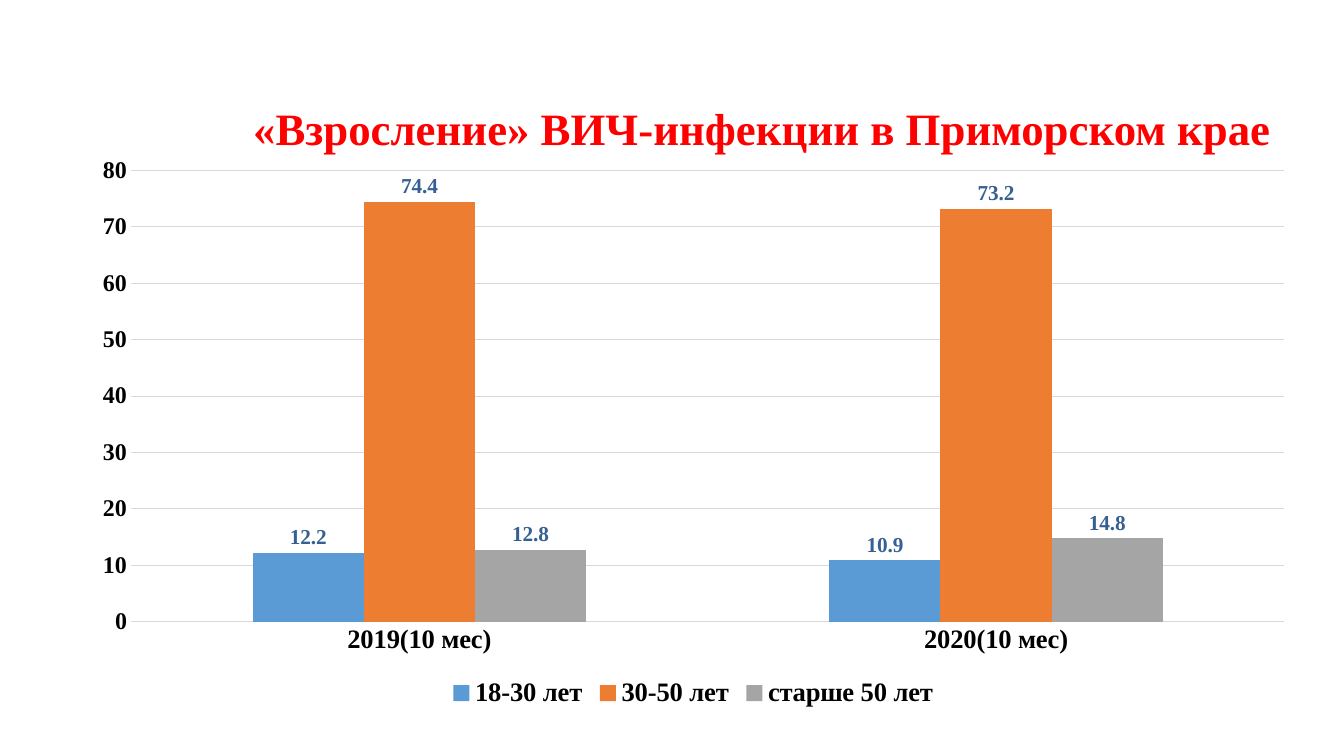
from dataclasses import dataclass

from lxml.etree import SubElement
from pptx import Presentation
from pptx.chart.data import CategoryChartData
from pptx.dml.color import RGBColor
from pptx.enum.chart import (XL_CHART_TYPE, XL_LABEL_POSITION,
                             XL_LEGEND_POSITION, XL_TICK_MARK)
from pptx.enum.text import MSO_ANCHOR, PP_ALIGN
from pptx.oxml.ns import qn
from pptx.util import Inches, Pt


@dataclass
class Theme:
    face: str = "Times New Roman"
    title: str = "FF0000"
    ink: str = "000000"
    label: str = "376092"
    grid: str = "D9D9D9"
    bars: tuple = ("5B9BD5", "ED7D31", "A5A5A5")
    title_size: float = 32
    cat_size: float = 19
    val_size: float = 17.1
    label_size: float = 15.2
    hair: float = 0.71


def style(font, face, size, color, bold=True):
    font.name, font.size, font.bold = face, Pt(size), bold
    font.color.rgb = RGBColor.from_string(color)


def write(frame, text, face, size, color, bold=True, align=PP_ALIGN.CENTER):
    frame.word_wrap = True
    frame.vertical_anchor = MSO_ANCHOR.MIDDLE
    para = frame.paragraphs[0]
    para.alignment = align
    run = para.add_run()
    run.text = text
    style(run.font, face, size, color, bold)


class Deck:
    def __init__(self, theme):
        self.theme = theme
        self.prs = Presentation()
        self.prs.slide_width, self.prs.slide_height = Inches(13.33), Inches(7.5)
        self.slide = self.prs.slides.add_slide(self.prs.slide_layouts[6])

    def title(self, text, box):
        t = self.theme
        shape = self.slide.shapes.add_textbox(*map(Inches, box))
        write(shape.text_frame, text, t.face, t.title_size, t.title)

    def hairline(self, line):
        line.color.rgb = RGBColor.from_string(self.theme.grid)
        line.width = Pt(self.theme.hair)

    def columns(self, cats, series, box, inner):
        t = self.theme
        data = CategoryChartData(number_format="General")
        data.categories = cats
        for name, vals in series.items():
            data.add_series(name, vals)
        chart = self.slide.shapes.add_chart(
            XL_CHART_TYPE.COLUMN_CLUSTERED, *map(Inches, box), data).chart
        chart.has_title = False
        style(chart.font, "Calibri", 10, t.ink, bold=False)

        # Axes
        cat, val = chart.category_axis, chart.value_axis
        for axis, size in ((cat, t.cat_size), (val, t.val_size)):
            axis.major_tick_mark = axis.minor_tick_mark = XL_TICK_MARK.NONE
            style(axis.tick_labels.font, t.face, size, t.ink)
        self.hairline(cat.format.line)
        val.format.line.fill.background()
        val.minimum_scale, val.maximum_scale, val.major_unit = 0, 80, 10
        self.hairline(val.major_gridlines.format.line)

        # Bars and their values
        plot = chart.plots[0]
        plot.gap_width, plot.overlap = 219, 0
        plot.vary_by_categories = False
        for bar, color in zip(plot.series, t.bars):
            bar.format.fill.solid()
            bar.format.fill.fore_color.rgb = RGBColor.from_string(color)
            labels = bar.data_labels
            labels.show_value = True
            labels.position = XL_LABEL_POSITION.OUTSIDE_END
            style(labels.font, t.face, t.label_size, t.label)

        # Legend
        chart.has_legend = True
        chart.legend.position = XL_LEGEND_POSITION.BOTTOM
        chart.legend.include_in_layout = False
        style(chart.legend.font, t.face, t.cat_size, t.ink)
        self.place(chart, inner)

    def place(self, chart, inner):
        """Set the inner plot area as fractions of the chart."""
        area = chart.plots[0]._element.getparent()
        for old in area.findall(qn("c:layout")):
            area.remove(old)
        layout = SubElement(area, qn("c:layout"))
        area.insert(0, layout)
        manual = SubElement(layout, qn("c:manualLayout"))
        marks = [("layoutTarget", "inner"), ("xMode", "edge"), ("yMode", "edge")]
        for tag, value in marks + list(zip("xywh", inner)):
            SubElement(manual, qn("c:" + tag)).set("val", str(value))

    def save(self):
        self.prs.save("out.pptx")


def main():
    deck = Deck(Theme())
    # Age groups by year
    left, top, width, height = box = (0.77, 1.45, 12.21, 5.62)
    inner = ((1.3 - left) / width, (1.69 - top) / height,
             11.44 / width, 4.48 / height)
    groups = {
        "18-30 лет": (12.2, 10.9),
        "30-50 лет": (74.4, 73.2),
        "старше 50 лет": (12.8, 14.8),
    }
    deck.columns(("2019(10 мес)", "2020(10 мес)"), groups, box, inner)
    # Heading
    deck.title("«Взросление» ВИЧ-инфекции в Приморском крае",
               (2.33, 0.92, 10.46, 0.7))
    deck.save()


if __name__ == "__main__":
    main()
